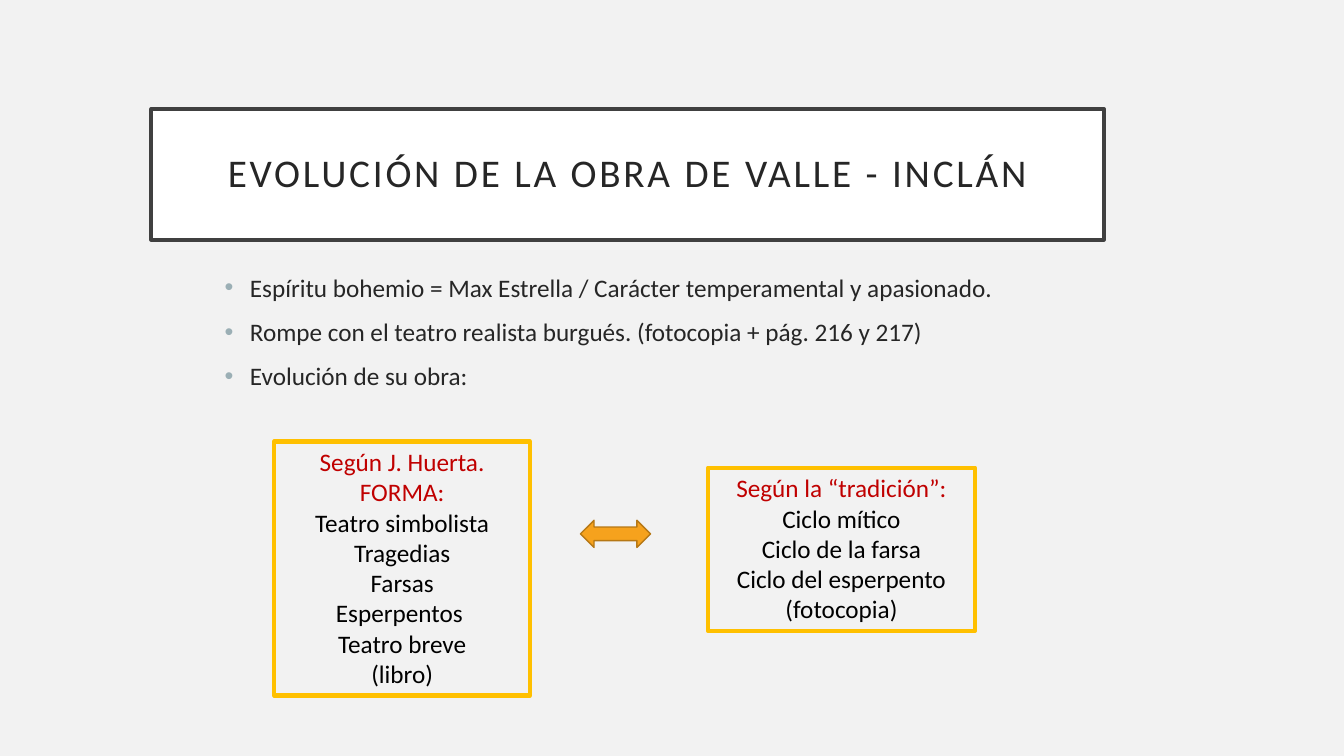
from dataclasses import dataclass

from lxml import etree
from pptx import Presentation
from pptx.dml.color import RGBColor
from pptx.enum.shapes import MSO_SHAPE
from pptx.enum.text import MSO_ANCHOR, PP_ALIGN
from pptx.oxml.ns import qn
from pptx.util import Inches, Pt

RECTANGLE = MSO_SHAPE.RECTANGLE
DOUBLE_ARROW = MSO_SHAPE.LEFT_RIGHT_ARROW
TOP, MIDDLE = MSO_ANCHOR.TOP, MSO_ANCHOR.MIDDLE
LEFT, CENTER = PP_ALIGN.LEFT, PP_ALIGN.CENTER
WIDTH, HEIGHT = 13.33, 7.5


@dataclass(frozen=True)
class Theme:
    font: str = "Calibri"
    title_size: int = 28
    body_size: int = 18
    page: str = "F2F2F2"
    panel: str = "FFFFFF"
    frame: str = "404040"
    text: str = "262626"
    item: str = "000000"
    heading: str = "C00000"
    bullet: str = "9BAFB5"
    card_line: str = "FFC000"
    arrow: str = "F6A21D"
    arrow_line: str = "B67815"


THEME = Theme()


def color(value):
    return RGBColor.from_string(value)


def apply(target, formats):
    for name, value in formats.items():
        setattr(target, name, value)


def add_box(page, kind, box, fill, line, line_width):
    shape = page.shapes.add_shape(kind, *map(Inches, box))
    shape.shadow.inherit = False
    if fill:
        shape.fill.solid()
        shape.fill.fore_color.rgb = color(fill)
    else:
        shape.fill.background()
    shape.line.color.rgb = color(line)
    shape.line.width = Pt(line_width)
    return shape


def write(shape, lines, size, align, anchor, margin=None, **para_formats):
    frame = shape.text_frame
    apply(frame, {"word_wrap": True, "vertical_anchor": anchor})
    if margin is not None:
        sides = ("left", "top", "right", "bottom")
        apply(frame, {f"margin_{side}": Inches(margin) for side in sides})
    for index, (text, ink) in enumerate(lines):
        para = frame.add_paragraph() if index else frame.paragraphs[0]
        apply(para, {"alignment": align, **para_formats})
        span = para.add_run()
        span.text = text
        apply(span.font, {"name": THEME.font, "size": Pt(size)})
        span.font.color.rgb = color(ink)
    return frame.paragraphs


def add_title(page, box, text):
    shape = add_box(page, RECTANGLE, box, THEME.panel, THEME.frame, 2.5)
    paras = write(shape, [(text, THEME.text)], THEME.title_size, CENTER, MIDDLE,
                  margin=0.2, line_spacing=0.9)
    paras[0].runs[0].font._element.set("spc", "200")


def add_bullets(page, box, points):
    shape = page.shapes.add_textbox(*map(Inches, box))
    lines = [(point, THEME.text) for point in points]
    for para in write(shape, lines, THEME.body_size, LEFT, TOP, space_before=Pt(10)):
        settings = para._p.get_or_add_pPr()
        settings.set("marL", str(Inches(0.25)))
        settings.set("indent", str(-Inches(0.25)))
        tint = etree.SubElement(settings, qn("a:buClr"))
        etree.SubElement(tint, qn("a:srgbClr"), val=THEME.bullet)
        etree.SubElement(settings, qn("a:buFont"), typeface="Arial")
        etree.SubElement(settings, qn("a:buChar"), char="•")


def add_card(page, box, headings, items):
    shape = add_box(page, RECTANGLE, box, None, THEME.card_line, 3)
    lines = [(text, THEME.heading) for text in headings]
    lines += [(text, THEME.item) for text in items]
    write(shape, lines, THEME.body_size, CENTER, TOP)


def add_comparison(page, box):
    left, top, width, height = box
    add_card(page, (left, top, 0.365 * width, height),
             ["Según J. Huerta.", "FORMA:"],
             ["Teatro simbolista", "Tragedias", "Farsas", "Esperpentos ",
              "Teatro breve", "(libro)"])
    add_card(page, (left + 0.619 * width, top + 0.103 * height,
                    0.381 * width, 0.643 * height),
             ["Según la “tradición”:"],
             ["Ciclo mítico", "Ciclo de la farsa", "Ciclo del esperpento",
              "(fotocopia)"])
    add_box(page, DOUBLE_ARROW,
            (left + 0.437 * width, top + 0.31 * height, 0.1 * width, 0.107 * height),
            THEME.arrow, THEME.arrow_line, 1)


def build_page(deck):
    page = deck.slides.add_slide(deck.slide_layouts[6])
    page.background.fill.solid()
    page.background.fill.fore_color.rgb = color(THEME.page)
    add_title(page, (1.5, 1.08, 9.45, 1.3), "EVOLUCIÓN DE LA OBRA DE VALLE - INCLÁN")
    add_bullets(page, (2.13, 2.65, 8.02, 1.35), [
        "Espíritu bohemio = Max Estrella / Carácter temperamental y apasionado.",
        "Rompe con el teatro realista burgués. (fotocopia + pág. 216 y 217)",
        "Evolución de su obra:",
    ])
    add_comparison(page, (2.72, 4.38, 6.95, 2.52))


def main():
    deck = Presentation()
    apply(deck, {"slide_width": Inches(WIDTH), "slide_height": Inches(HEIGHT)})
    build_page(deck)
    deck.save("out.pptx")


if __name__ == "__main__":
    main()
